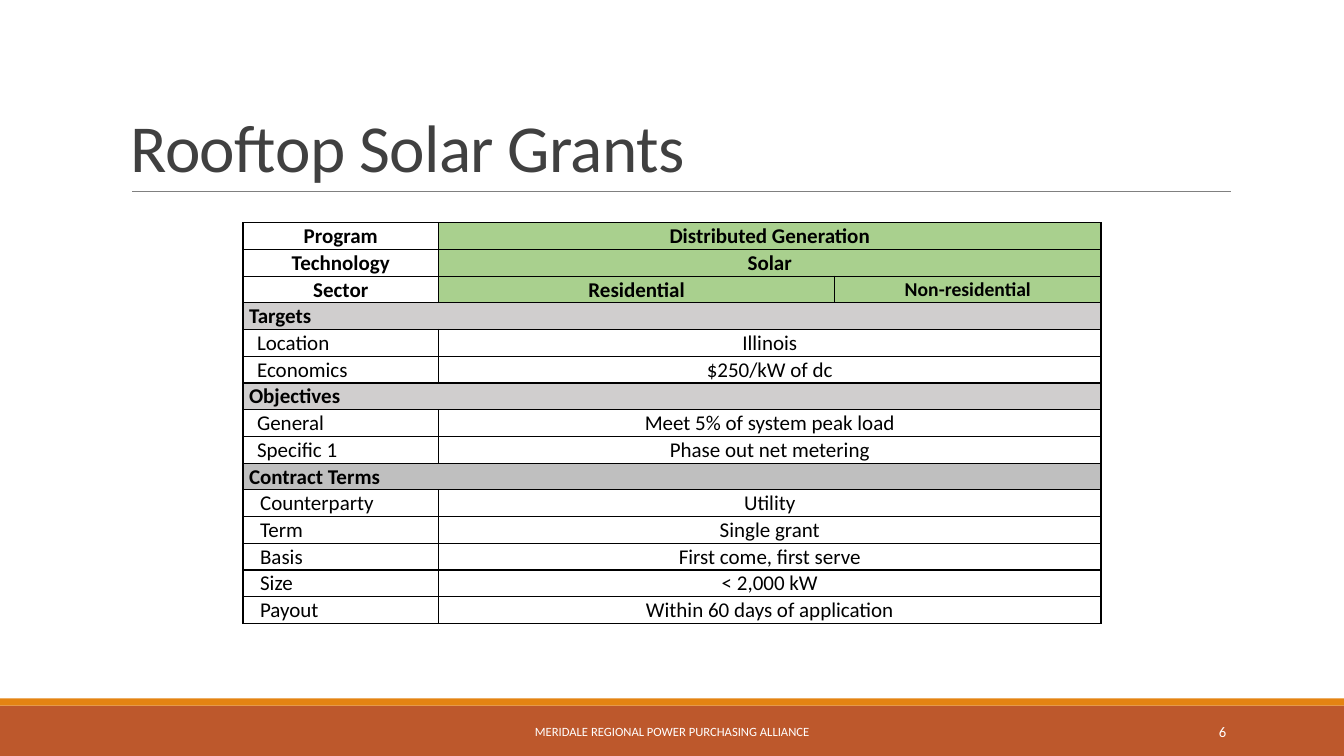
import pptx
import pptx.util
import pptx.dml.color
import pptx.enum.shapes
import pptx.enum.text
import pptx.oxml
import pptx.oxml.ns
from lxml import etree

Inches = pptx.util.Inches
Pt = pptx.util.Pt
RGBColor = pptx.dml.color.RGBColor
Align = pptx.enum.text.PP_ALIGN
Anchor = pptx.enum.text.MSO_ANCHOR

BLACK = RGBColor(0x00, 0x00, 0x00)
WHITE = RGBColor(0xFF, 0xFF, 0xFF)
DARK = RGBColor(0x40, 0x40, 0x40)
GRAY = RGBColor(0x80, 0x80, 0x80)
RUST = RGBColor(0xBD, 0x58, 0x2C)
ORANGE = RGBColor(0xE4, 0x83, 0x12)
GREEN = RGBColor(0xA9, 0xD0, 0x8E)
SILVER = RGBColor(0xD0, 0xCE, 0xCE)
STEEL = RGBColor(0xBF, 0xBF, 0xBF)

FONT = "Calibri"
WIDTH, HEIGHT = 13.33, 7.5
COLS = [1.94, 3.93, 2.64]
ROW = 0.265

HEADS = [
    ("Program", ["Distributed Generation"]),
    ("Technology", ["Solar"]),
    ("Sector", ["Residential", "Non-residential"]),
]
# Each group: title, band colour, label indent, rows
GROUPS = [
    ("Targets", SILVER, 0.14, [
        ("Location", "Illinois"),
        ("Economics", "$250/kW of dc"),
    ]),
    ("Objectives", SILVER, 0.14, [
        ("General", "Meet 5% of system peak load"),
        ("Specific 1", "Phase out net metering"),
    ]),
    ("Contract Terms", STEEL, 0.17, [
        ("Counterparty", "Utility"),
        ("Term", "Single grant"),
        ("Basis", "First come, first serve"),
        ("Size", "< 2,000 kW"),
        ("Payout", "Within 60 days of application"),
    ]),
]


def add_run(para, text, size, color, bold=False):
    run = para.add_run()
    run.text = text
    font = run.font
    font.name, font.size, font.bold = FONT, Pt(size), bold
    font.color.rgb = color
    return run


def add_text(slide, box, text, size, color, align, anchor):
    """Add a one-line text box and return its paragraph and run."""
    frame = slide.shapes.add_textbox(*map(Inches, box)).text_frame
    frame.word_wrap = True
    frame.vertical_anchor = anchor
    para = frame.paragraphs[0]
    para.alignment = align
    return para, add_run(para, text, size, color)


def add_bar(slide, box, color):
    kind = pptx.enum.shapes.MSO_SHAPE.RECTANGLE
    bar = slide.shapes.add_shape(kind, *map(Inches, box))
    bar.shadow.inherit = False
    bar.fill.solid()
    bar.fill.fore_color.rgb = color
    bar.line.fill.background()


def add_title(slide, left, top, width, height):
    para, run = add_text(slide, (left, top, width, height),
                         "Rooftop Solar Grants", 48, DARK,
                         Align.LEFT, Anchor.BOTTOM)
    para.line_spacing = 0.85
    run._r.get_or_add_rPr().set("spc", "-50")
    base = Inches(top + height)
    rule = slide.shapes.add_connector(
        pptx.enum.shapes.MSO_CONNECTOR.STRAIGHT,
        Inches(left + 0.11), base, Inches(left + width + 0.01), base)
    rule.line.color.rgb = GRAY
    rule.line.width = Pt(0.5)
    etree.SubElement(rule._element.spPr, pptx.oxml.ns.qn("a:effectLst"))


def set_edges(cell):
    """Draw a thin black border on all four sides."""
    props = cell._tc.get_or_add_tcPr()
    space = pptx.oxml.ns.nsdecls("a")
    for spot, side in enumerate("LRTB"):
        props.insert(spot, pptx.oxml.parse_xml(
            f'<a:ln{side} {space} w="{Pt(1)}"><a:solidFill>'
            f'<a:srgbClr val="{BLACK}"/></a:solidFill></a:ln{side}>'))


def fill_cell(cell, text, fill=None, bold=False, indent=None, size=15):
    """Write a cell, centred unless an indent is given."""
    cell.margin_left = Inches(0.01 if indent is None else indent)
    cell.margin_right = cell.margin_top = Inches(0.01)
    cell.margin_bottom = 0
    cell.vertical_anchor = Anchor.MIDDLE
    if fill is not None:
        cell.fill.solid()
        cell.fill.fore_color.rgb = fill
    para = cell.text_frame.paragraphs[0]
    para.alignment = Align.CENTER if indent is None else Align.LEFT
    add_run(para, text, size, BLACK, bold)


def add_grid(slide, left, top):
    count = len(HEADS) + sum(1 + len(group[3]) for group in GROUPS)
    table = slide.shapes.add_table(
        count, len(COLS), Inches(left), Inches(top),
        Inches(sum(COLS)), Inches(count * ROW)).table
    table.first_row = table.horz_banding = False
    for col, width in zip(table.columns, COLS):
        col.width = Inches(width)
    for row in table.rows:
        row.height = Inches(ROW)
    for cell in table.iter_cells():
        cell.fill.background()
        set_edges(cell)

    def span(row, start):
        cell = table.cell(row, start)
        cell.merge(table.cell(row, len(COLS) - 1))
        return cell

    for row, (label, names) in enumerate(HEADS):
        fill_cell(table.cell(row, 0), label, bold=True)
        if len(names) == 1:
            fill_cell(span(row, 1), names[0], GREEN, True)
        else:
            for col, (name, size) in enumerate(zip(names, (15, 14)), 1):
                fill_cell(table.cell(row, col), name, GREEN, True, size=size)

    row = len(HEADS)
    for title, color, indent, items in GROUPS:
        fill_cell(span(row, 0), title, color, True, 0.06)
        for row, (label, value) in enumerate(items, row + 1):
            fill_cell(table.cell(row, 0), label, indent=indent)
            fill_cell(span(row, 1), value)
        row += 1


def add_footer(slide, top):
    add_bar(slide, (0, top, WIDTH, HEIGHT - top), RUST)
    add_bar(slide, (0, top - 0.07, WIDTH, 0.07), ORANGE)
    line = top + 0.06
    add_text(slide, (4.03, line, 5.27, 0.4),
             "MERIDALE REGIONAL POWER PURCHASING ALLIANCE", 9, WHITE,
             Align.CENTER, Anchor.MIDDLE)
    add_text(slide, (10.83, line, 1.43, 0.4), "6", 10.5, WHITE,
             Align.RIGHT, Anchor.MIDDLE)


def main():
    deck = pptx.Presentation()
    deck.slide_width, deck.slide_height = Inches(WIDTH), Inches(HEIGHT)
    slide = deck.slides.add_slide(deck.slide_layouts[6])
    add_title(slide, 1.2, 0.31, 11, 1.59)
    add_grid(slide, 2.41, 2.21)
    add_footer(slide, 7)
    deck.save("out.pptx")


if __name__ == "__main__":
    main()
